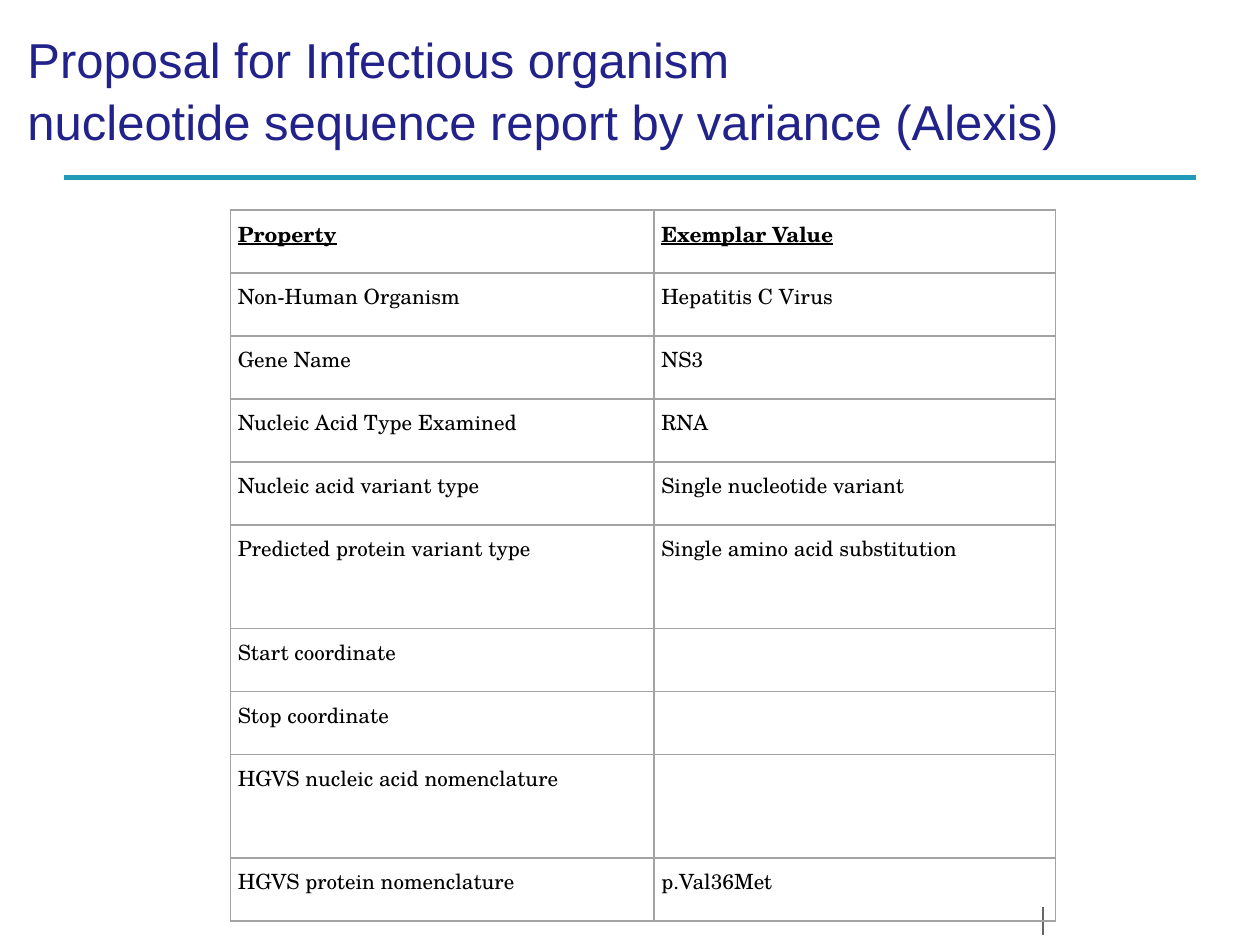
from lxml.etree import SubElement
from pptx import Presentation
from pptx.dml.color import RGBColor
from pptx.enum.shapes import MSO_CONNECTOR as Connector
from pptx.enum.text import MSO_ANCHOR as Anchor
from pptx.oxml.ns import qn
from pptx.util import Pt

PROPERTIES = [
    ("Property", "Exemplar Value"),
    ("Non-Human Organism", "Hepatitis C Virus"),
    ("Gene Name", "NS3"),
    ("Nucleic Acid Type Examined", "RNA"),
    ("Nucleic acid variant type", "Single nucleotide variant"),
    ("Predicted protein variant type", "Single amino acid substitution"),
    ("Start coordinate", ""),
    ("Stop coordinate", ""),
    ("HGVS nucleic acid nomenclature", ""),
    ("HGVS protein nomenclature", "p.Val36Met"),
]
COLUMN_WIDTHS = (242, 229.6)
ROW_HEIGHT = 36
TALL_ROW_HEIGHT = 59.2
TALL_ROWS = (5, 8)
CELL_INSET = 4.3


def rgb(value):
    """Turn a hex string into a colour."""
    return RGBColor.from_string(value)


def write(frame, text, *, size, font, color, bold=False, underline=False, spacing=None):
    """Put formatted text into a text frame."""
    frame.text = text
    frame.word_wrap = True
    paragraph = frame.paragraphs[0]
    if spacing:
        paragraph.line_spacing = spacing
    for face in [paragraph.font] + [run.font for run in paragraph.runs]:
        face.size, face.name = Pt(size), font
        face.bold, face.underline = bold, underline
        face.color.rgb = rgb(color)


def add_title(slide, text):
    """Add the slide title, centred vertically in its box."""
    title = slide.shapes.add_textbox(Pt(8.64), Pt(28.08), Pt(648), Pt(45.36))
    write(title.text_frame, text, size=28, font="Arial", color="22228B", spacing=1.05)
    title.text_frame.vertical_anchor = Anchor.MIDDLE


def add_rule(slide, start, end, color, width):
    """Draw a straight line between two points."""
    rule = slide.shapes.add_connector(Connector.STRAIGHT, *map(Pt, start + end))
    rule.line.color.rgb = rgb(color)
    rule.line.width = Pt(width)
    SubElement(rule._element.spPr, qn("a:effectLst"))


def border_cell(cell, color, width):
    """Outline all four sides of a table cell."""
    properties = cell._tc.get_or_add_tcPr()
    for index, side in enumerate(("lnL", "lnR", "lnT", "lnB")):
        edge = properties.makeelement(qn(f"a:{side}"), {"w": str(Pt(width))})
        fill = SubElement(edge, qn("a:solidFill"))
        SubElement(fill, qn("a:srgbClr"), val=color)
        properties.insert(index, edge)


def add_property_table(slide, rows):
    """Add the table of properties and their exemplar values."""
    heights = [TALL_ROW_HEIGHT if i in TALL_ROWS else ROW_HEIGHT for i in range(len(rows))]
    table = slide.shapes.add_table(
        len(rows), len(COLUMN_WIDTHS), Pt(131.6), Pt(120),
        Pt(sum(COLUMN_WIDTHS)), Pt(sum(heights)),
    ).table
    table.first_row = table.horz_banding = False
    for column, width in zip(table.columns, COLUMN_WIDTHS):
        column.width = Pt(width)
    for row_index, (values, height) in enumerate(zip(rows, heights)):
        table.rows[row_index].height = Pt(height)
        heading = row_index == 0
        for cell, value in zip(table.rows[row_index].cells, values):
            cell.fill.background()
            border_cell(cell, "A3A3A3", 1)
            cell.margin_left = cell.margin_right = Pt(CELL_INSET)
            cell.margin_top = cell.margin_bottom = Pt(CELL_INSET)
            write(cell.text_frame, value, size=12, font="TeX Gyre Schola",
                  color="000000", bold=heading, underline=heading)


def main():
    """Build the slide and save it."""
    deck = Presentation()
    deck.slide_width, deck.slide_height = Pt(720), Pt(540)
    slide = deck.slides.add_slide(deck.slide_layouts[6])
    add_rule(slide, (596.2, 518.4), (596.2, 534.2), "666666", 1)
    add_rule(slide, (36.7, 101.5), (683.3, 101.5), "229BB8", 3)
    add_title(slide, "Proposal for Infectious organism\v"
                     "nucleotide sequence report by variance (Alexis)")
    add_property_table(slide, PROPERTIES)
    deck.save("out.pptx")


if __name__ == "__main__":
    main()
